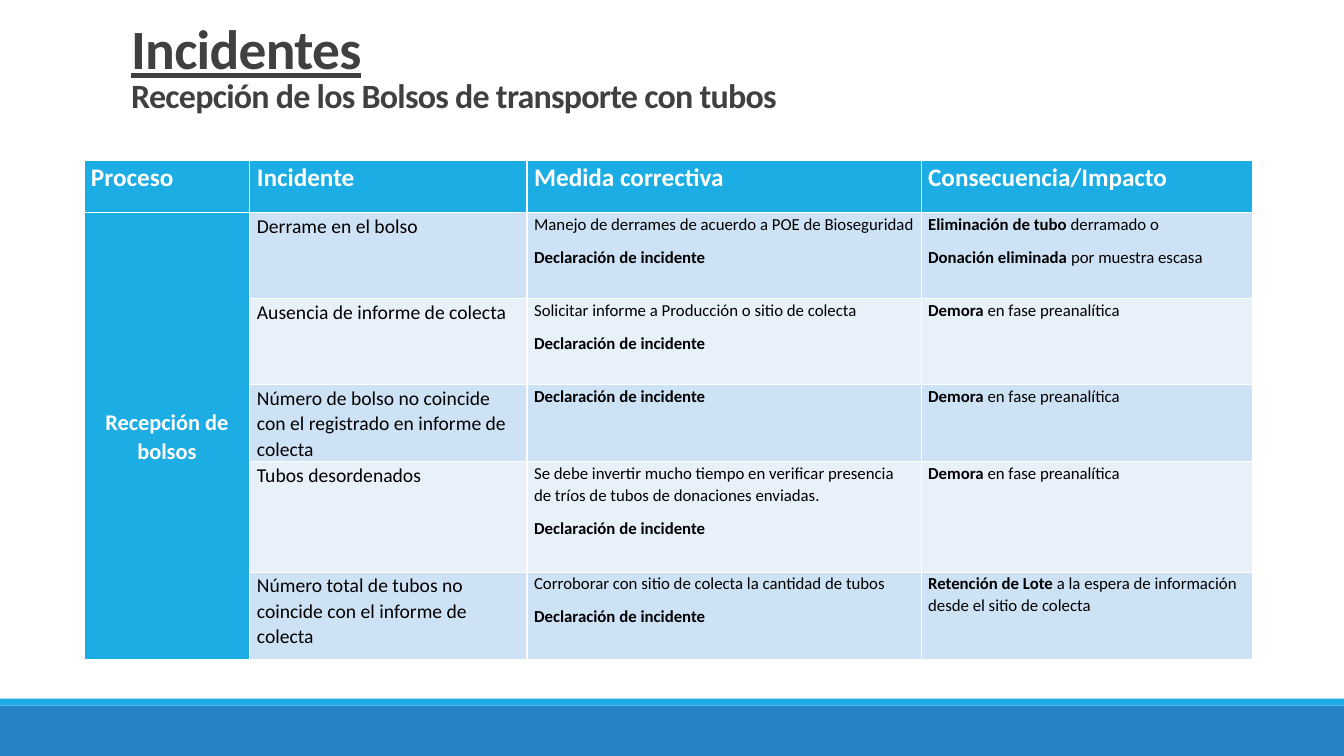
from pptx import Presentation
from pptx.dml.color import RGBColor
from pptx.enum.shapes import MSO_SHAPE
from pptx.enum.text import MSO_ANCHOR, MSO_AUTO_SIZE, PP_ALIGN
from pptx.util import Pt

RECT = MSO_SHAPE.RECTANGLE
TOP, MIDDLE = MSO_ANCHOR.TOP, MSO_ANCHOR.MIDDLE
LEFT, CENTER = PP_ALIGN.LEFT, PP_ALIGN.CENTER
NO_FIT = MSO_AUTO_SIZE.NONE

CYAN = RGBColor(0x1C, 0xAD, 0xE4)
BLUE = RGBColor(0x26, 0x83, 0xC6)
BAND_DARK = RGBColor(0xCD, 0xE3, 0xF5)
BAND_LIGHT = RGBColor(0xE8, 0xF1, 0xFA)
GREY = RGBColor(0x40, 0x40, 0x40)
WHITE = RGBColor(0xFF, 0xFF, 0xFF)
BLACK = RGBColor(0, 0, 0)
FONT = "Calibri"

# Each paragraph is a pair: bold text, then plain text
DECLARATION = ("Declaración de incidente", "")
DELAY = ("Demora", " en fase preanalítica")
HEADERS = ["Proceso", "Incidente", "Medida correctiva", "Consecuencia/Impacto"]
INCIDENTS = [
    ("Derrame en el bolso",
     [("", "Manejo de derrames de acuerdo a POE de Bioseguridad"), DECLARATION],
     [("Eliminación de tubo ", "derramado o"),
      ("Donación eliminada ", "por muestra escasa")]),
    ("Ausencia de informe de colecta",
     [("", "Solicitar informe a Producción o sitio de colecta"), DECLARATION],
     [DELAY]),
    ("Número de bolso no coincide con el registrado en informe de colecta",
     [DECLARATION],
     [DELAY]),
    ("Tubos desordenados",
     [("", "Se debe invertir mucho tiempo en verificar presencia de tríos "
           "de tubos de donaciones enviadas."), DECLARATION],
     [DELAY]),
    ("Número total de tubos no coincide con el informe de colecta",
     [("", "Corroborar con sitio de colecta la cantidad de tubos"), DECLARATION],
     [("Retención de Lote ", "a la espera de información desde el sitio de colecta")]),
]
COL_WIDTHS = [118.5, 198, 281.5, 236.5]
ROW_HEIGHTS = [37.5, 61.5, 61.5, 55, 79, 62.5]


def add_run(p, text, size, color, bold):
    r = p.add_run()
    r.text = text
    r.font.name = FONT
    r.font.size = Pt(size)
    r.font.color.rgb = color
    r.font.bold = bold
    return r


def fill_cell(cell, paragraphs, size, color, fill, align=LEFT, anchor=TOP):
    cell.fill.solid()
    cell.fill.fore_color.rgb = fill
    cell.margin_left = cell.margin_right = Pt(5)
    cell.margin_top = cell.margin_bottom = 0
    cell.vertical_anchor = anchor
    tf = cell.text_frame
    for i, (strong, plain) in enumerate(paragraphs):
        p = tf.paragraphs[0] if i == 0 else tf.add_paragraph()
        p.alignment = align
        p.line_spacing = 1.07
        p.space_after = Pt(8)
        for text, bold in ((strong, True), (plain, False)):
            if text:
                add_run(p, text, size, color, bold)


prs = Presentation()
prs.slide_width, prs.slide_height = Pt(960), Pt(540)
s = prs.slides.add_slide(prs.slide_layouts[5])

# Footer bands
for top, height, color in ((504, 36, BLUE), (499, 5, CYAN)):
    sp = s.shapes.add_shape(RECT, 0, Pt(top), Pt(960), Pt(height))
    sp.shadow.inherit = False
    sp.fill.solid()
    sp.fill.fore_color.rgb = color
    sp.line.fill.background()

# Title and subtitle
title = s.shapes.title
title.left, title.top, title.width, title.height = Pt(86.5), Pt(14), Pt(792), Pt(100)
tf = title.text_frame
tf.auto_size = NO_FIT
tf.vertical_anchor = TOP
tf.word_wrap = True
title_lines = (("Incidentes", 39.6, True),
               ("Recepción de los Bolsos de transporte con tubos", 24.3, False))
for i, (text, size, underline) in enumerate(title_lines):
    p = tf.paragraphs[0] if i == 0 else tf.add_paragraph()
    p.alignment = LEFT
    p.line_spacing = 0.85
    r = add_run(p, text, size, GREY, True)
    r.font.underline = underline
    r.font._element.set("spc", "-50")

# Incident table
frame = s.shapes.add_table(len(ROW_HEIGHTS), len(COL_WIDTHS), Pt(60), Pt(114.5),
                           Pt(sum(COL_WIDTHS)), Pt(sum(ROW_HEIGHTS)))
table = frame.table
table.first_col = True
for col, width in zip(table.columns, COL_WIDTHS):
    col.width = Pt(width)
for row, height in zip(table.rows, ROW_HEIGHTS):
    row.height = Pt(height)

for c, header in enumerate(HEADERS):
    fill_cell(table.cell(0, c), [(header, "")], 18, WHITE, CYAN)

table.cell(1, 0).merge(table.cell(len(INCIDENTS), 0))
fill_cell(table.cell(1, 0), [("Recepción de bolsos", "")], 16, WHITE, CYAN, CENTER, MIDDLE)

for n, (incident, measures, impacts) in enumerate(INCIDENTS, 1):
    band = BAND_DARK if n % 2 else BAND_LIGHT
    fill_cell(table.cell(n, 1), [("", incident)], 14, BLACK, band)
    fill_cell(table.cell(n, 2), measures, 12, BLACK, band)
    fill_cell(table.cell(n, 3), impacts, 12, BLACK, band)

prs.save("out.pptx")
